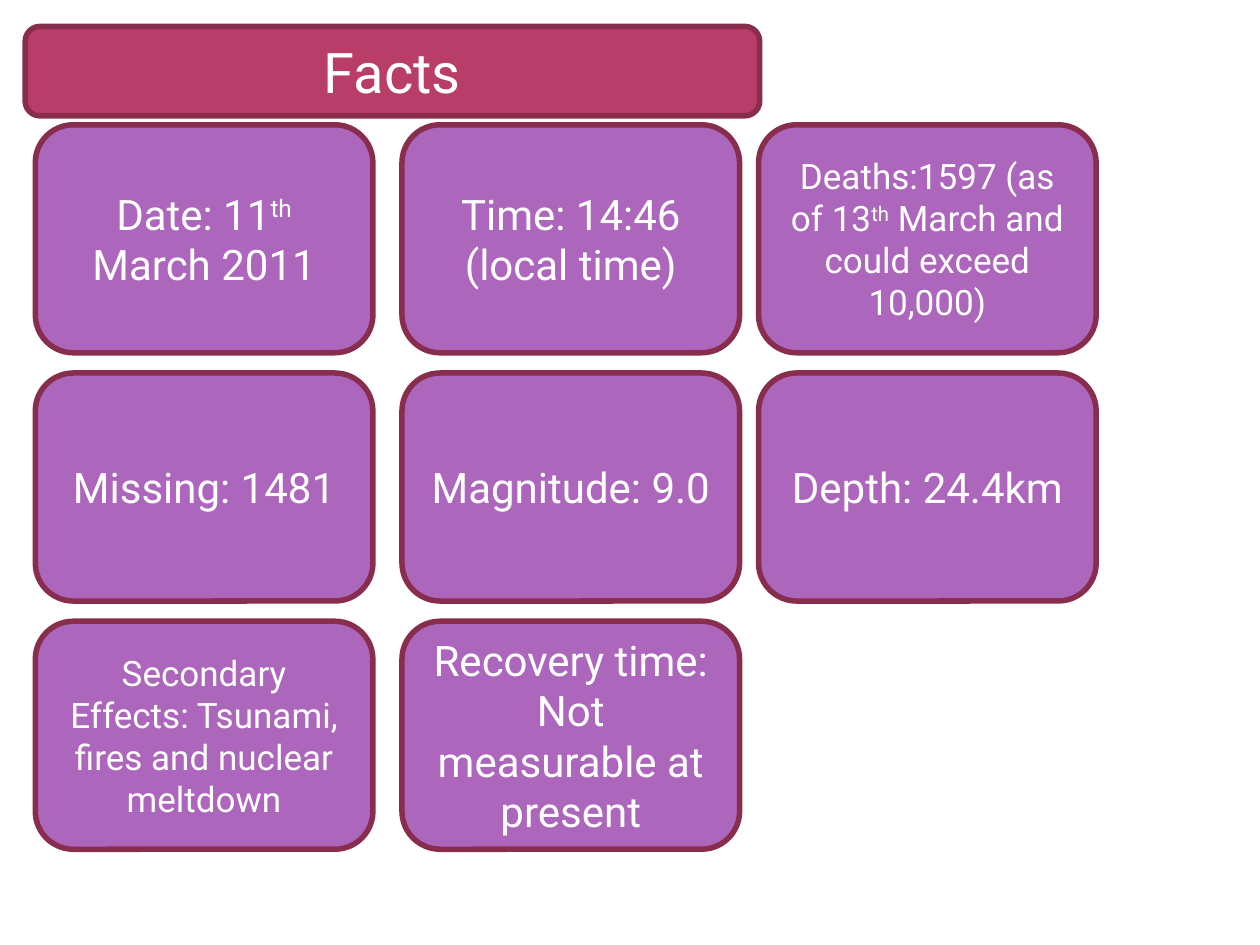
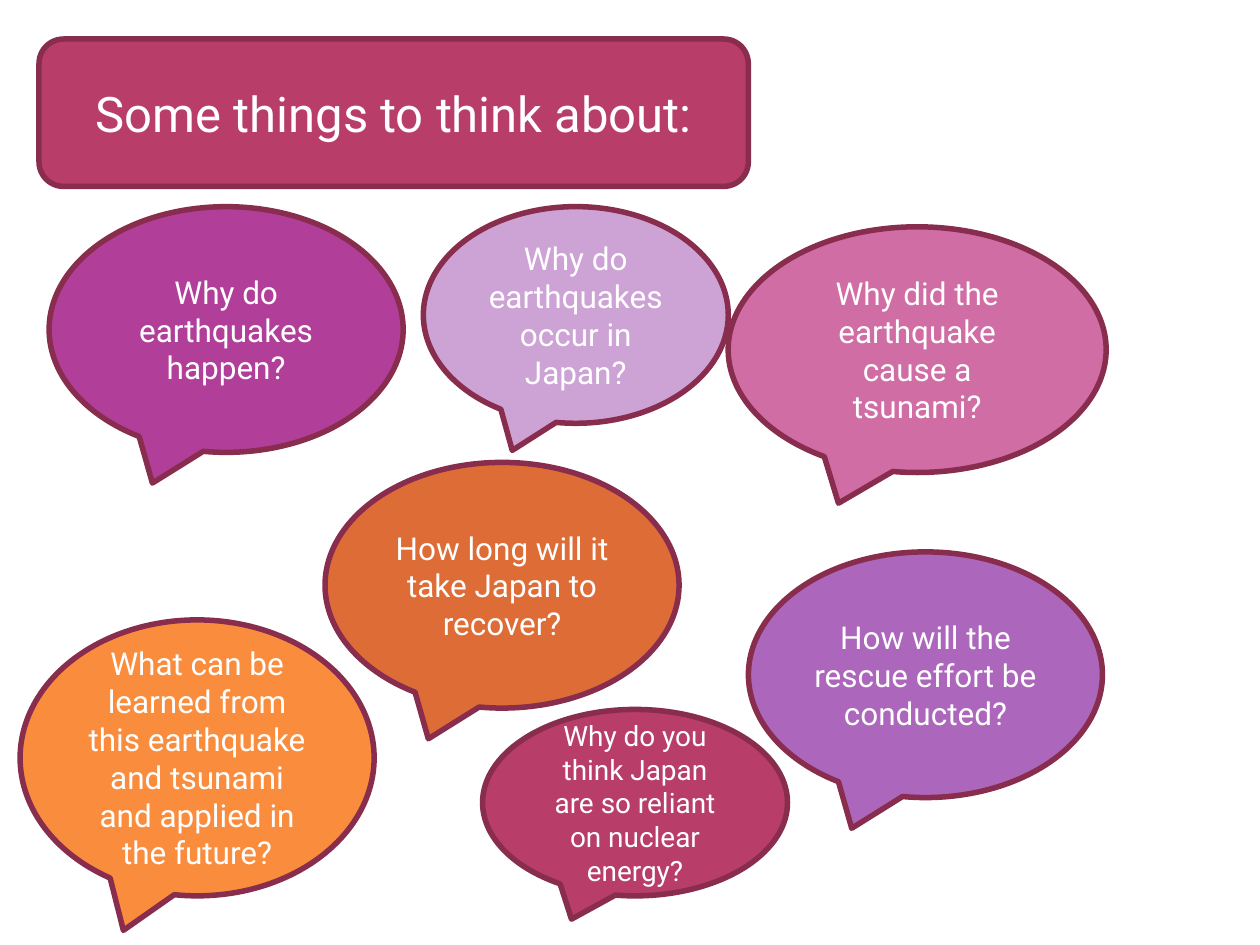
"""Build two slides on an earthquake: a grid of facts and a set of questions."""
from pptx import Presentation
from pptx.dml.color import RGBColor as RGB
from pptx.enum.shapes import MSO_SHAPE as SHAPE
from pptx.enum.text import MSO_ANCHOR as ANCHOR, PP_ALIGN as ALIGN
from pptx.util import Inches, Pt

WHITE = RGB(0xFF, 0xFF, 0xFF)
WINE = RGB(0x88, 0x2D, 0x4D)
ROSE = RGB(0xB8, 0x3D, 0x68)
VIOLET = RGB(0xAC, 0x66, 0xBB)
PLUM = RGB(0xB1, 0x3F, 0x9A)
LILAC = RGB(0xCD, 0xA3, 0xD6)
PINK = RGB(0xCF, 0x6D, 0xA4)
RUST = RGB(0xDE, 0x6C, 0x36)
AMBER = RGB(0xFA, 0x8D, 0x3D)
WIDE, HIGH = Inches(10), Inches(7.5)


def add_box(slide, kind, area, fill, size, text):
    """Draw a labelled shape; area is in percent of the slide, ^ marks raised text."""
    left, top, width, height = area
    box = slide.shapes.add_shape(
        kind, int(WIDE * left / 100), int(HIGH * top / 100),
        int(WIDE * width / 100), int(HIGH * height / 100))
    box.shadow.inherit = False
    box.fill.solid()
    box.fill.fore_color.rgb = fill
    box.line.color.rgb = WINE
    box.line.width = Pt(3.15)
    frame = box.text_frame
    frame.word_wrap = True
    frame.vertical_anchor = ANCHOR.MIDDLE
    para = frame.paragraphs[0]
    para.alignment = ALIGN.CENTER
    for part, words in enumerate(text.split("^")):
        run = para.add_run()
        run.text = words
        for name, value in {"name": "Roboto", "size": Pt(size)}.items():
            setattr(run.font, name, value)
        run.font.color.rgb = WHITE
        if part % 2:
            run._r.get_or_add_rPr().set("baseline", "30000")


deck = Presentation()
deck.slide_width, deck.slide_height = WIDE, HIGH
blank = deck.slide_layouts[6]

facts = deck.slides.add_slide(blank)
cols = (2.8, 31.9, 60.2)
rows = [13.2 + 26.27 * row for row in range(3)]
cells = [
    (24, "Date: 11^th^ March 2011"),
    (24, "Time: 14:46 (local time)"),
    (20, "Deaths:1597 (as of 13^th^ March and could exceed 10,000)"),
    (24, "Missing: 1481"),
    (24, "Magnitude: 9.0"),
    (24, "Depth: 24.4km"),
    (20, "Secondary Effects: Tsunami, fires and nuclear meltdown"),
    (24, "Recovery time: Not measurable at present"),
]
for spot, (size, text) in enumerate(cells):
    row, col = divmod(spot, len(cols))
    area = (cols[col], rows[row], 26.8, 24.13)
    add_box(facts, SHAPE.ROUNDED_RECTANGLE, area, VIOLET, size, text)
add_box(facts, SHAPE.ROUNDED_RECTANGLE, (2, 2.8, 58.3, 9.47), ROSE, 32, "Facts")

think = deck.slides.add_slide(blank)
add_box(think, SHAPE.ROUNDED_RECTANGLE, (3.1, 4.13, 56.3, 15.6), ROSE, 28,
        "Some things to think about:")
bubbles = [
    ((3.9, 21.87, 28.1, 26), PLUM, 18, "Why do earthquakes happen?"),
    ((25.8, 48.93, 28.1, 26), RUST, 18, "How long will it take Japan to recover?"),
    ((57.8, 24, 30, 26), PINK, 18, "Why did the earthquake cause a tsunami?"),
    ((59.4, 58.4, 28.1, 26), VIOLET, 18, "How will the rescue effort be conducted?"),
    ((1.6, 65.6, 28.1, 29.2), AMBER, 18,
     "What can be learned from this earthquake and tsunami and applied in the future?"),
    ((33.6, 21.87, 24.2, 22.93), LILAC, 18, "Why do earthquakes occur in Japan?"),
    ((38.3, 75.07, 24.2, 19.73), ROSE, 16,
     "Why do you think Japan are so reliant on nuclear energy?"),
]
for bubble in bubbles:
    add_box(think, SHAPE.OVAL_CALLOUT, *bubble)

deck.save("out.pptx")
